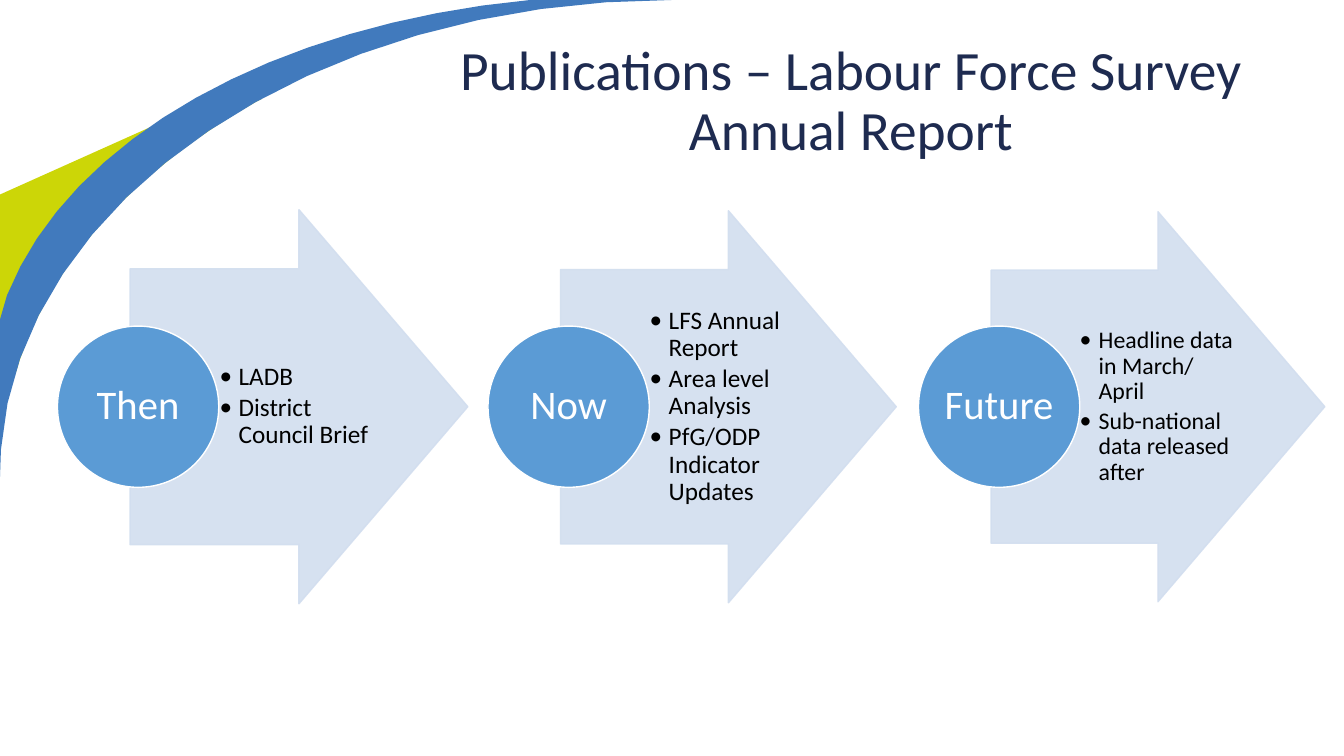
import collections

import lxml.etree
import pptx
import pptx.dml.color
import pptx.enum.shapes
import pptx.enum.text
import pptx.oxml.ns
import pptx.util

Box = collections.namedtuple("Box", "left top width height")
Inches = pptx.util.Inches
Pt = pptx.util.Pt
Align = pptx.enum.text.PP_ALIGN
Anchor = pptx.enum.text.MSO_ANCHOR
Preset = pptx.enum.shapes.MSO_SHAPE

THEME = {
    "font": "Calibri",
    "navy": "1E2B50",
    "green": "CCD607",
    "swoosh": "417ABD",
    "arrow": "D2DEEF",
    "circle": "5B9BD5",
    "white": "FFFFFF",
    "black": "000000",
    "title_size": 39.6,
    "label_size": 29,
}
PAGE = Box(0, 0, 13.33, 7.5)
TITLE_BOX = Box(3.72, 0.36, 9.44, 1.31)
FIRST_STAGE = Box(0.57, 2.08, 4.07, 3.91)
STAGE_PITCH = 4.27
STAGE_SHRINK = 0.02
CIRCLE_SIZE = 1.6
ARROW_INDENT = 0.72
UNITS_PER_INCH = 1000
STAGES = [
    ("Then", 18, ["LADB", "District Council Brief"]),
    ("Now", 18, ["LFS Annual Report", "Area level Analysis", "PfG/ODP Indicator Updates"]),
    ("Future", 17, ["Headline data in March/ April", "Sub-national data released after"]),
]


def rgb(name):
    return pptx.dml.color.RGBColor.from_string(THEME[name])


def emu(box):
    return [Inches(length) for length in box]


def apply_format(target, values):
    for name, value in values.items():
        setattr(target, name, value)


def set_frame(frame, inset_left, inset_top, inset_right, wrap=True):
    apply_format(frame, {
        "margin_left": Inches(inset_left),
        "margin_top": Inches(inset_top),
        "margin_right": Inches(inset_right),
        "margin_bottom": Inches(inset_top),
        "vertical_anchor": Anchor.MIDDLE,
        "word_wrap": wrap,
    })


def write(para, text, size, colour, align):
    apply_format(para, {"alignment": align, "line_spacing": 0.9})
    span = para.add_run()
    span.text = text
    apply_format(span.font, {"name": THEME["font"], "size": Pt(size)})
    span.font.color.rgb = rgb(colour)


def paint(shape, fill, line=None):
    shape.shadow.inherit = False
    shape.fill.solid()
    shape.fill.fore_color.rgb = rgb(fill)
    if line:
        shape.line.color.rgb = rgb(line)
        shape.line.width = Pt(1)
    else:
        shape.line.fill.background()


def set_opacity(shape, percent):
    for colour in shape.element.spPr.iter(pptx.oxml.ns.qn("a:srgbClr")):
        alpha = lxml.etree.SubElement(colour, pptx.oxml.ns.qn("a:alpha"))
        alpha.set("val", str(percent * 1000))


def add_bullet(para):
    properties = para._p.get_or_add_pPr()
    properties.set("marL", str(Inches(0.19)))
    properties.set("indent", str(-Inches(0.19)))
    for tag, name, value in (("a:buFont", "typeface", THEME["font"]), ("a:buChar", "char", "•")):
        lxml.etree.SubElement(properties, pptx.oxml.ns.qn(tag)).set(name, value)


def curve(start, first, second, end, steps=16):
    points = []
    for step in range(steps + 1):
        t = step / steps
        weights = ((1 - t) ** 3, 3 * t * (1 - t) ** 2, 3 * t * t * (1 - t), t ** 3)
        points.append(tuple(
            sum(weight * value for weight, value in zip(weights, axis))
            for axis in zip(start, first, second, end)
        ))
    return points


def add_outline(page, box, points, fill):
    units = [((box.left + x) * UNITS_PER_INCH, (box.top + y) * UNITS_PER_INCH) for x, y in points]
    builder = page.shapes.build_freeform(*units[0], scale=Inches(1) / UNITS_PER_INCH)
    builder.add_line_segments(units[1:], close=True)
    paint(builder.convert_to_shape(), fill)


def add_corner(page, box):
    green = [(2.52, 0.8), (2.6, 0.98)]
    green += curve((2.54, 1.01), (1.4, 1.65), (0.56, 2.53), (0.2, 3.56))
    green += [(0.16, 3.69), (0, 3.32), (0, 1.93)]
    swoosh = [(7.16, 0)]
    swoosh += curve((6.67, 0), (3.1, 0), (0.19, 1.98), (0.01, 4.46))
    swoosh += [(0, 4.74), (0, 3.17)]
    swoosh += curve((0.07, 2.93), (0.69, 1.37), (2.72, 0.24), (5.26, 0))
    swoosh += [(5.49, 0)]
    add_outline(page, box, green, "green")
    add_outline(page, box, swoosh, "swoosh")


def add_title(page, box):
    frame = page.shapes.add_textbox(*emu(box)).text_frame
    set_frame(frame, 0.1, 0.05, 0.1)
    write(frame.paragraphs[0], "Publications – Labour Force Survey Annual Report",
          THEME["title_size"], "navy", Align.CENTER)


def add_stage(page, box, label, size, items):
    arrow_box = Box(box.left + ARROW_INDENT, box.top, box.width - ARROW_INDENT, box.height)
    arrow = page.shapes.add_shape(Preset.RIGHT_ARROW, *emu(arrow_box))
    arrow.adjustments[0], arrow.adjustments[1] = 0.7, 0.5
    paint(arrow, "arrow", "arrow")
    set_opacity(arrow, 90)

    text_box = Box(arrow_box.left + arrow_box.width / 4, box.top + box.height * 0.15,
                   arrow_box.width * 0.487, box.height * 0.7)
    frame = page.shapes.add_textbox(*emu(text_box)).text_frame
    set_frame(frame, 0.05, 0.01, 0)
    for index, item in enumerate(items):
        para = frame.add_paragraph() if index else frame.paragraphs[0]
        para.space_after = Pt(size * 0.15)
        add_bullet(para)
        write(para, item, size, "black", Align.LEFT)

    circle_box = Box(box.left, box.top + (box.height - CIRCLE_SIZE) / 2, CIRCLE_SIZE, CIRCLE_SIZE)
    circle = page.shapes.add_shape(Preset.OVAL, *emu(circle_box))
    paint(circle, "circle", "white")
    set_frame(circle.text_frame, 0.02, 0.02, 0.02, wrap=False)
    write(circle.text_frame.paragraphs[0], label, THEME["label_size"], "white", Align.CENTER)


def add_timeline(page, first):
    for index, stage in enumerate(STAGES):
        shrink = STAGE_SHRINK * index
        box = Box(first.left + STAGE_PITCH * index, first.top + shrink / 2,
                  first.width - shrink, first.height - shrink)
        add_stage(page, box, *stage)


def main():
    deck = pptx.Presentation()
    deck.slide_width, deck.slide_height = Inches(PAGE.width), Inches(PAGE.height)
    page = deck.slides.add_slide(deck.slide_layouts[6])
    add_corner(page, PAGE)
    add_title(page, TITLE_BOX)
    add_timeline(page, FIRST_STAGE)
    deck.save("out.pptx")


if __name__ == "__main__":
    main()
